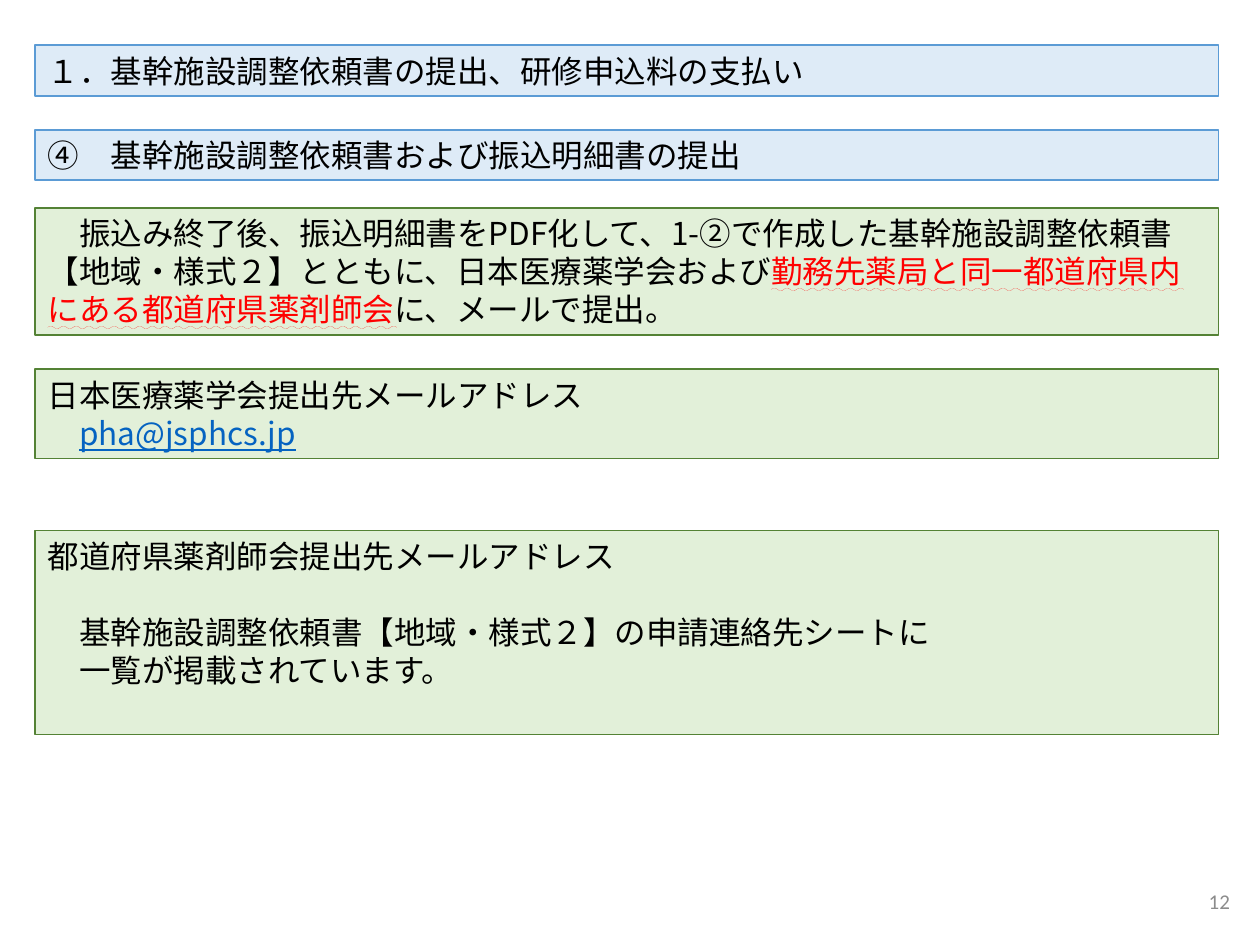
from pptx import Presentation
from pptx.dml.color import RGBColor
from pptx.enum.shapes import MSO_SHAPE as SHAPE
from pptx.enum.text import MSO_ANCHOR as ANCHOR, PP_ALIGN as ALIGN, MSO_UNDERLINE as UNDERLINE
from pptx.oxml.ns import qn
from pptx.util import Inches, Pt
from lxml import etree

BLACK, RED, LINK, GREY = "000000", "FF0000", "0563C1", "8C8C8C"
BLUE_BOX = ("DEEBF7", "5B9BD5")
GREEN_BOX = ("E2F0D9", "548235")


def rgb(code):
    return RGBColor.from_string(code)


class SlideBuilder:
    font, size, line_height = "Noto Sans CJK JP", 18, 21.7
    left, width = 0.28, 9.39

    def __init__(self, s):
        self.s = s

    def run(self, p, text, color=BLACK, underline=None, font=None, size=None):
        r = p.add_run()
        r.text = text
        f = r.font
        f.name, f.size = font or self.font, Pt(size or self.size)
        f.color.rgb = rgb(color)
        if underline:
            f.underline = underline
        ea = etree.SubElement(r._r.get_or_add_rPr(), qn("a:ea"))
        ea.set("typeface", font or self.font)

    def box(self, top, height, colors, paragraphs, gap_before=None):
        """Full-width box; gap_before is the index of a paragraph set one line lower."""
        sp = self.s.shapes.add_shape(SHAPE.RECTANGLE, Inches(self.left), Inches(top),
                                     Inches(self.width), Inches(height))
        sp.shadow.inherit = False
        fill, line = colors
        sp.fill.solid()
        sp.fill.fore_color.rgb = rgb(fill)
        sp.line.color.rgb = rgb(line)
        sp.line.width = Pt(1)
        tf = sp.text_frame
        tf.word_wrap = True
        tf.vertical_anchor = ANCHOR.TOP
        for i, runs in enumerate(paragraphs):
            p = tf.add_paragraph() if i else tf.paragraphs[0]
            p.alignment = ALIGN.LEFT
            p.line_spacing = Pt(self.line_height)
            if i == gap_before:
                p.space_before = Pt(self.line_height)
            for r in runs:
                self.run(p, *r)

    def page_number(self, text):
        sp = self.s.shapes.add_textbox(Inches(7.61), Inches(6.95), Inches(2.25), Inches(0.4))
        tf = sp.text_frame
        tf.word_wrap = True
        tf.vertical_anchor = ANCHOR.MIDDLE
        p = tf.paragraphs[0]
        p.alignment = ALIGN.RIGHT
        self.run(p, text, GREY, font="Calibri", size=12)


def main():
    prs = Presentation()
    prs.slide_width, prs.slide_height = Inches(10), Inches(7.5)
    b = SlideBuilder(prs.slides.add_slide(prs.slide_layouts[6]))

    # Headings
    b.box(0.36, 0.4, BLUE_BOX, [[("１．基幹施設調整依頼書の提出、研修申込料の支払い",)]])
    b.box(1.03, 0.4, BLUE_BOX, [[("④　基幹施設調整依頼書および振込明細書の提出",)]])

    # What to submit
    b.box(1.65, 1.01, GREEN_BOX, [[
        ("　振込み終了後、振込明細書をPDF化して、1-②で作成した基幹施設調整依頼書"
         "【地域・様式２】とともに、日本医療薬学会および",),
        ("勤務先薬局と同一都道府県内にある都道府県薬剤師会", RED, UNDERLINE.WAVY_LINE),
        ("に、メールで提出。",),
    ]])

    # Where to submit
    b.box(2.93, 0.71, GREEN_BOX, [
        [("日本医療薬学会提出先メールアドレス",)],
        [("　",), ("pha@jsphcs.jp", LINK, UNDERLINE.SINGLE_LINE)],
    ])
    b.box(4.21, 1.62, GREEN_BOX, [
        [("都道府県薬剤師会提出先メールアドレス",)],
        [("　基幹施設調整依頼書【地域・様式２】の申請連絡先シートに",)],
        [("　一覧が掲載されています。",)],
    ], gap_before=1)

    # Footer
    b.page_number("12")

    prs.save("out.pptx")


if __name__ == "__main__":
    main()
